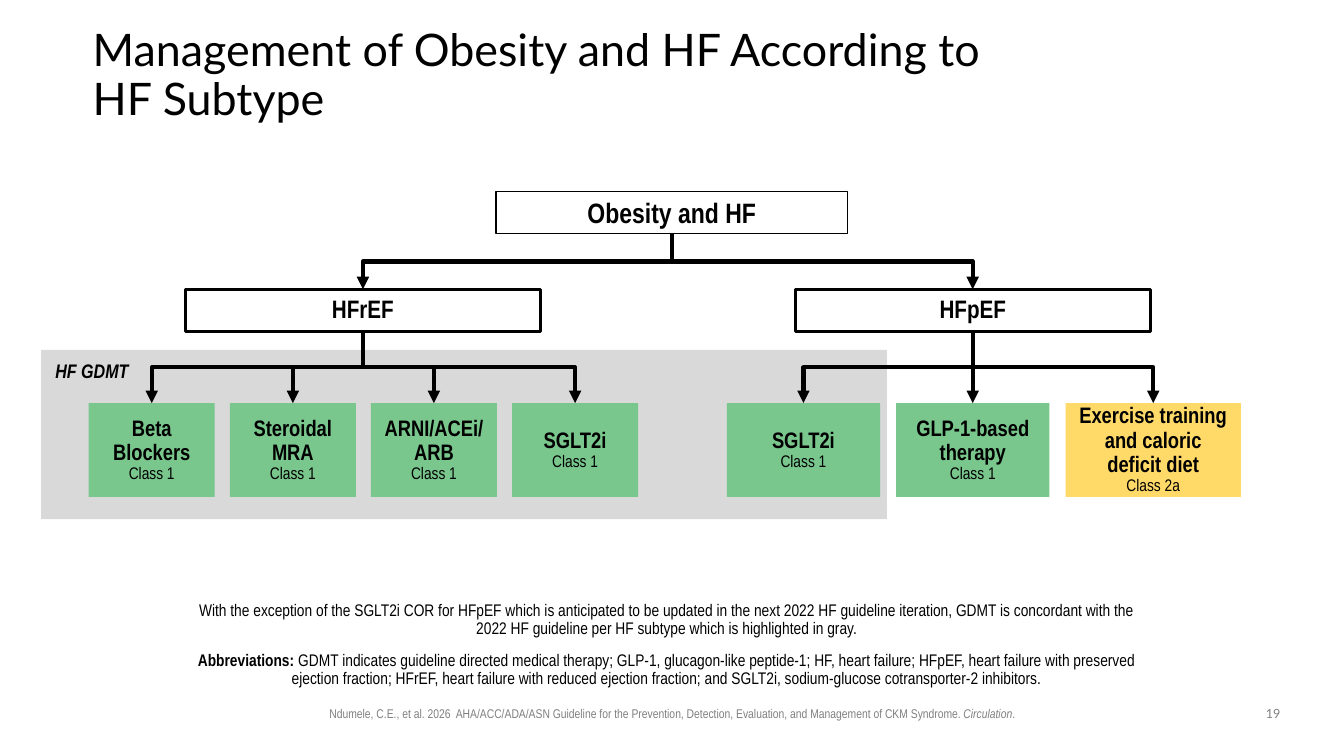
import copy
from typing import NamedTuple

import pptx
import pptx.dml.color
import pptx.enum.shapes
import pptx.enum.text
import pptx.oxml.ns
import pptx.oxml.xmlchemy
import pptx.util
import lxml.etree

ALIGN = pptx.enum.text.PP_ALIGN
ANCHOR = pptx.enum.text.MSO_ANCHOR
KIND = pptx.enum.shapes.MSO_CONNECTOR
WIDE = pptx.util.Inches(13.333)
HIGH = pptx.util.Inches(7.5)
NARROW = "Arial Narrow"
BLACK, WHITE, GRAY, PALE = "000000", "FFFFFF", "808080", "D9D9D9"
GREEN, GOLD = "79C78D", "FFDA68"


class Box(NamedTuple):
    left: float
    top: float
    width: float
    height: float

    @property
    def mid(self) -> float:
        return self.left + self.width / 2

    @property
    def base(self) -> float:
        return self.top + self.height


class Run(NamedTuple):
    text: str
    bold: bool = False
    slant: bool = False
    size: float | None = None


class Leaf(NamedTuple):
    name: str
    grade: str = "Class 1"
    fill: str = GREEN
    width: float = 11.4


class Branch(NamedTuple):
    name: str
    left: float
    start: float
    gap: float
    leaves: list[Leaf]


TOP = Box(36.9, 25.33, 26.17, 5.6)
TREE = [
    Branch("HFrEF", 13.8, 6.6, 1.12, [
        Leaf("Beta Blockers", width=9.38),
        Leaf("Steroidal MRA", width=9.38),
        Leaf("ARNI/ACEi/\nARB", width=9.38),
        Leaf("SGLT2i", width=9.38),
    ]),
    Branch("HFpEF", 59.18, 54.08, 1.2, [
        Leaf("SGLT2i"),
        Leaf("GLP-1-based therapy"),
        Leaf("Exercise training and caloric deficit diet", "Class 2a", GOLD, 13.05),
    ]),
]


def across(share: float) -> int:
    return round(WIDE * share / 100)


def down(share: float) -> int:
    return round(HIGH * share / 100)


def place(box: Box) -> tuple[int, int, int, int]:
    return across(box.left), down(box.top), across(box.width), down(box.height)


def color(code: str) -> pptx.dml.color.RGBColor:
    return pptx.dml.color.RGBColor.from_string(code)


def write(frame, paras: list[list[Run]], *, size: float, font: str = NARROW,
          tint: str = BLACK, align=ALIGN.CENTER, anchor=ANCHOR.TOP,
          lead: float = 1.0, gap: float = 0,
          inset: tuple[float, ...] = (0.75, 0.67, 0.75, 0.67)) -> None:
    frame.word_wrap = True
    frame.auto_size = pptx.enum.text.MSO_AUTO_SIZE.NONE
    frame.vertical_anchor = anchor
    frame.margin_left, frame.margin_right = across(inset[0]), across(inset[2])
    frame.margin_top, frame.margin_bottom = down(inset[1]), down(inset[3])
    for rank, runs in enumerate(paras):
        para = frame.add_paragraph() if rank else frame.paragraphs[0]
        props = para._p.get_or_add_pPr()
        props.set("marL", "0")
        props.set("indent", "0")
        lxml.etree.SubElement(props, pptx.oxml.ns.qn("a:buNone"))
        para.alignment = align
        para.line_spacing = lead
        para.space_before = pptx.util.Pt(gap if rank else 0)
        for item in runs:
            for line, part in enumerate(item.text.split("\n")):
                if line:
                    para.add_line_break()
                run = para.add_run()
                run.text = part
                run.font.name = font
                run.font.size = pptx.util.Pt(item.size or size)
                run.font.bold = item.bold
                run.font.italic = item.slant
                run.font.color.rgb = color(tint)
        for stop in para._p.findall(pptx.oxml.ns.qn("a:br")):
            stop.insert(0, copy.deepcopy(para.runs[0]._r.rPr))


def block(slide, box: Box, fill: str, edge: float = 0):
    shape = slide.shapes.add_shape(
        pptx.enum.shapes.MSO_SHAPE.RECTANGLE, *place(box))
    shape.shadow.inherit = False
    shape.fill.solid()
    shape.fill.fore_color.rgb = color(fill)
    if edge:
        shape.line.color.rgb = color(BLACK)
        shape.line.width = pptx.util.Pt(edge)
    else:
        shape.line.fill.background()
    return shape.text_frame


def label(slide, box: Box):
    return slide.shapes.add_textbox(*place(box)).text_frame


def link(slide, source: Box, target: Box) -> None:
    x1, y1 = across(source.mid), down(source.base)
    x2, y2 = across(target.mid), down(target.top)
    if abs(x2 - x1) < across(0.1):
        line = slide.shapes.add_connector(KIND.STRAIGHT, x1, y1, x1, y2)
    else:
        mid_x, mid_y = (x1 + x2) // 2, (y1 + y2) // 2
        half_w, half_h = (y2 - y1) // 2, abs(x2 - x1) // 2
        right = x2 > x1
        side = -half_w if right else half_w
        line = slide.shapes.add_connector(
            KIND.ELBOW, mid_x - side, mid_y - half_h, mid_x + side, mid_y + half_h)
        line.element.spPr.xfrm.set("rot", str((270 if right else 90) * 60000))
    line.line.color.rgb = color(BLACK)
    line.line.width = pptx.util.Pt(3)
    head = lxml.etree.SubElement(
        line.line._get_or_add_ln(), pptx.oxml.ns.qn("a:tailEnd"))
    head.set("type", "triangle")
    lxml.etree.SubElement(line.element.spPr, pptx.oxml.ns.qn("a:effectLst"))


def holder(shape, box: Box):
    shape.left, shape.top, shape.width, shape.height = place(box)
    return shape.text_frame


def main() -> None:
    deck = pptx.Presentation()
    deck.slide_width, deck.slide_height = WIDE, HIGH
    slide = deck.slides.add_slide(deck.slide_layouts[1])

    write(holder(slide.shapes.title, Box(6.9, 5.33, 86.25, 9.6)),
          [[Run("Management of Obesity and HF According to \nHF Subtype")]],
          size=32, font="Lato", align=ALIGN.LEFT, anchor=ANCHOR.MIDDLE,
          lead=0.9, inset=(0, 0, 0, 0))
    write(holder(slide.placeholders[1], Box(14.1, 85.6, 71.78, 6.13)), [
        [Run("With the exception of the SGLT2i COR for HFpEF which is anticipated to be updated in the next 2022 HF guideline iteration, GDMT is concordant with the 2022 HF guideline per HF subtype which is highlighted in gray.")],
        [Run("Abbreviations: ", bold=True),
         Run("GDMT indicates guideline directed medical therapy; GLP-1, glucagon-like peptide-1; HF, heart failure; HFpEF, heart failure with preserved ejection fraction; HFrEF, heart failure with reduced ejection fraction; and SGLT2i, sodium-glucose cotransporter-2 inhibitors.")],
    ], size=12, anchor=ANCHOR.BOTTOM, lead=0.9, gap=10,
        inset=(0, 0.67, 0.75, 0.67))
    write(label(slide, Box(17.7, 92.67, 64.65, 3.33)), [[
        Run("Ndumele, C.E., et al. 2026  AHA/ACC/ADA/ASN Guideline for the Prevention, Detection, Evaluation, and Management of CKM Syndrome. "),
        Run("Circulation", slant=True), Run(".")]], size=9, tint=GRAY)
    write(label(slide, Box(93.15, 92.67, 3.15, 3.47)), [[Run("19")]],
          size=9, font="Lato", tint=GRAY)

    block(slide, Box(3.07, 46.27, 62.93, 22.4), PALE)
    write(label(slide, Box(3.37, 46.8, 12.97, 4.53)),
          [[Run("HF GDMT", bold=True, slant=True)]], size=14, align=ALIGN.LEFT)
    write(block(slide, TOP, WHITE, 1), [[Run("Obesity and HF", bold=True)]],
          size=20, anchor=ANCHOR.MIDDLE)
    for branch in TREE:
        node = Box(branch.left, 38.27, 26.4, 5.6)
        write(block(slide, node, WHITE, 2), [[Run(branch.name, bold=True)]],
              size=18, anchor=ANCHOR.MIDDLE, lead=0.9, inset=(0, 0, 0, 0))
        link(slide, TOP, node)
        left = branch.start
        for leaf in branch.leaves:
            cell = Box(left, 53.33, leaf.width, 12.4)
            write(block(slide, cell, leaf.fill),
                  [[Run(leaf.name, bold=True)], [Run(leaf.grade, size=12)]],
                  size=16, anchor=ANCHOR.MIDDLE, lead=0.9)
            link(slide, node, cell)
            left += leaf.width + branch.gap
    deck.save("out.pptx")


if __name__ == "__main__":
    main()
